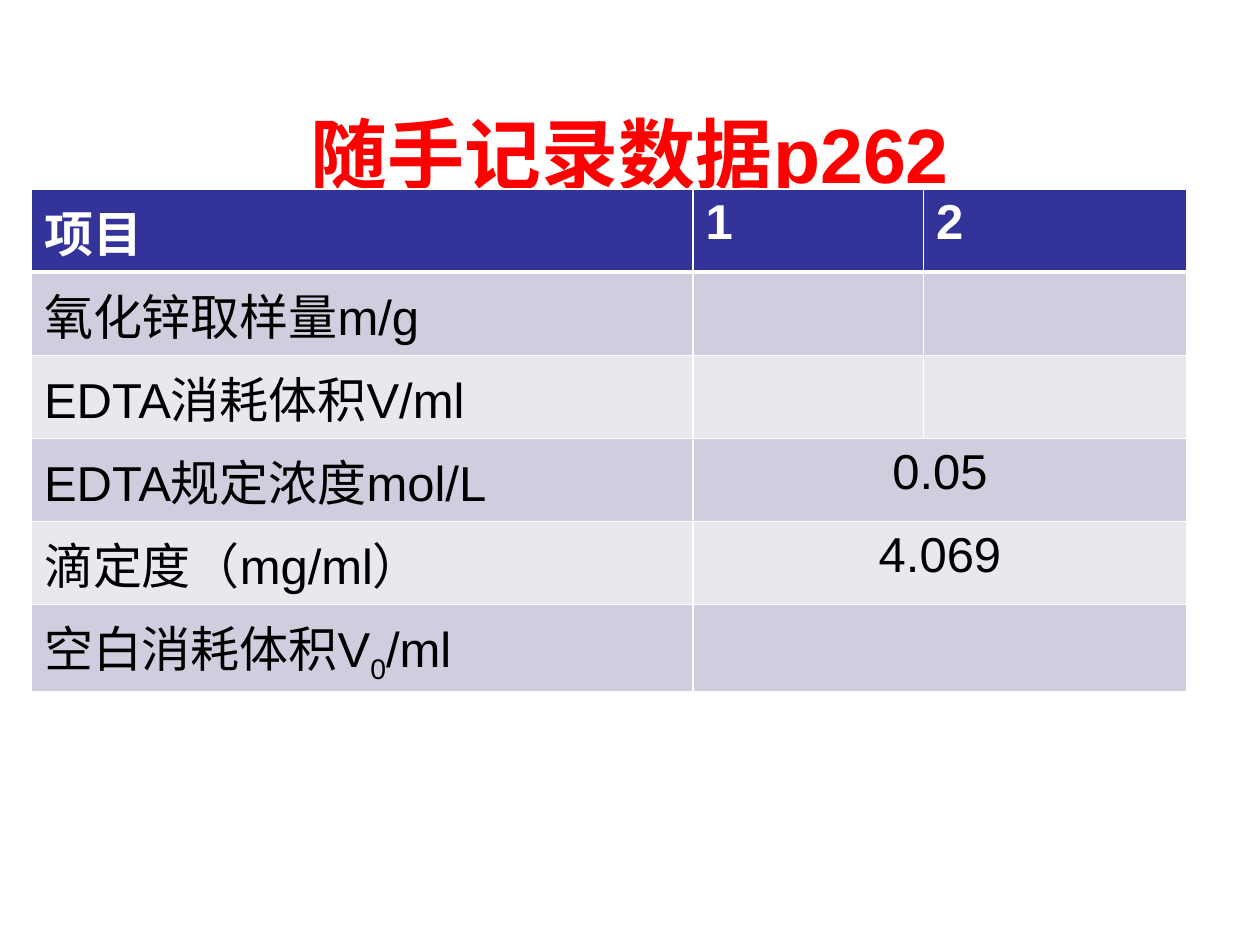
from dataclasses import dataclass

from lxml.etree import SubElement
from pptx import Presentation
from pptx.dml.color import RGBColor
from pptx.enum.text import MSO_ANCHOR as Anchor, PP_ALIGN as Align
from pptx.oxml.ns import qn
from pptx.util import Inches, Pt


@dataclass(frozen=True)
class Theme:
    font: str = "Arial"
    title_size: int = 44
    table_size: int = 28
    title: str = "FF0000"
    header: str = "333399"
    bands: tuple = ("CECEDE", "E8E8EF")
    light: str = "FFFFFF"
    dark: str = "000000"
    rule: int = 1
    header_rule: int = 3


THEME = Theme()
SLIDE_WIDTH, SLIDE_HEIGHT = 10, 7.5
COLUMN_WIDTHS = (5.25, 1.83, 2.09)
# The last row is taller to hold the subscript
ROW_HEIGHTS = (0.66,) * 5 + (0.69,)
SUBSCRIPT = "-25000"

# One entry per cell; a row of two cells spans its value over both trials
ROWS = (
    ("项目", "1", "2"),
    ("氧化锌取样量m/g", "", ""),
    ("EDTA消耗体积V/ml", "", ""),
    ("EDTA规定浓度mol/L", "0.05"),
    ("滴定度（mg/ml）", "4.069"),
    (("空白消耗体积V", "0", "/ml"), ""),
)


def style_font(font, size, color, bold=False):
    font.name = THEME.font
    font.size = Pt(size)
    font.bold = bold
    font.color.rgb = RGBColor.from_string(color)


def add_title(slide, text):
    shape = slide.shapes.add_textbox(
        Inches(0.05 * SLIDE_WIDTH), Inches(0.59),
        Inches(0.9 * SLIDE_WIDTH), Inches(SLIDE_HEIGHT / 6))
    text_frame = shape.text_frame
    text_frame.word_wrap = True
    text_frame.vertical_anchor = Anchor.MIDDLE
    text_frame.text = text
    paragraph = text_frame.paragraphs[0]
    paragraph.alignment = Align.CENTER
    style_font(paragraph.runs[0].font, THEME.title_size, THEME.title, True)


def set_borders(cell, top, bottom):
    """Draw the four cell borders; they must come before the fill in the XML."""
    properties = cell._tc.get_or_add_tcPr()
    widths = {"lnL": THEME.rule, "lnR": THEME.rule, "lnT": top, "lnB": bottom}
    for position, (tag, width) in enumerate(widths.items()):
        line = SubElement(properties, qn(f"a:{tag}"), w=str(Pt(width)))
        fill = SubElement(line, qn("a:solidFill"))
        SubElement(fill, qn("a:srgbClr"), val=THEME.light)
        properties.insert(position, line)


def fill_cell(cell, row, color):
    cell.fill.solid()
    cell.fill.fore_color.rgb = RGBColor.from_string(color)
    set_borders(cell,
                top=THEME.header_rule if row == 1 else THEME.rule,
                bottom=THEME.header_rule if row == 0 else THEME.rule)


def write_cell(cell, content, is_header, alignment):
    """Write plain text, or a (base, subscript, rest) tuple."""
    parts = content if isinstance(content, tuple) else (content,)
    paragraph = cell.text_frame.paragraphs[0]
    paragraph.alignment = alignment
    color = THEME.light if is_header else THEME.dark
    for index, part in enumerate(parts):
        run = paragraph.add_run()
        run.text = part
        style_font(run.font, THEME.table_size, color, is_header)
        if index == 1:
            run._r.get_or_add_rPr().set("baseline", SUBSCRIPT)


def add_record_table(slide):
    table = slide.shapes.add_table(
        len(ROWS), len(COLUMN_WIDTHS), Inches(0.25), Inches(0.2 * SLIDE_HEIGHT),
        Inches(sum(COLUMN_WIDTHS)), Inches(sum(ROW_HEIGHTS))).table
    for column, width in zip(table.columns, COLUMN_WIDTHS):
        column.width = Inches(width)

    for row, (contents, height) in enumerate(zip(ROWS, ROW_HEIGHTS)):
        table.rows[row].height = Inches(height)
        is_header = row == 0
        color = THEME.header if is_header else THEME.bands[(row - 1) % 2]
        for column in range(len(COLUMN_WIDTHS)):
            fill_cell(table.cell(row, column), row, color)
        is_spanned = len(contents) < len(COLUMN_WIDTHS)
        if is_spanned:
            table.cell(row, 1).merge(table.cell(row, 2))
        for column, content in enumerate(contents):
            if content:
                alignment = Align.CENTER if is_spanned and column else Align.LEFT
                write_cell(table.cell(row, column), content, is_header, alignment)


def main():
    presentation = Presentation()
    presentation.slide_width = Inches(SLIDE_WIDTH)
    presentation.slide_height = Inches(SLIDE_HEIGHT)
    slide = presentation.slides.add_slide(presentation.slide_layouts[6])

    # The title lies behind the top edge of the table
    add_title(slide, "随手记录数据p262")
    add_record_table(slide)

    presentation.save("out.pptx")


if __name__ == "__main__":
    main()
